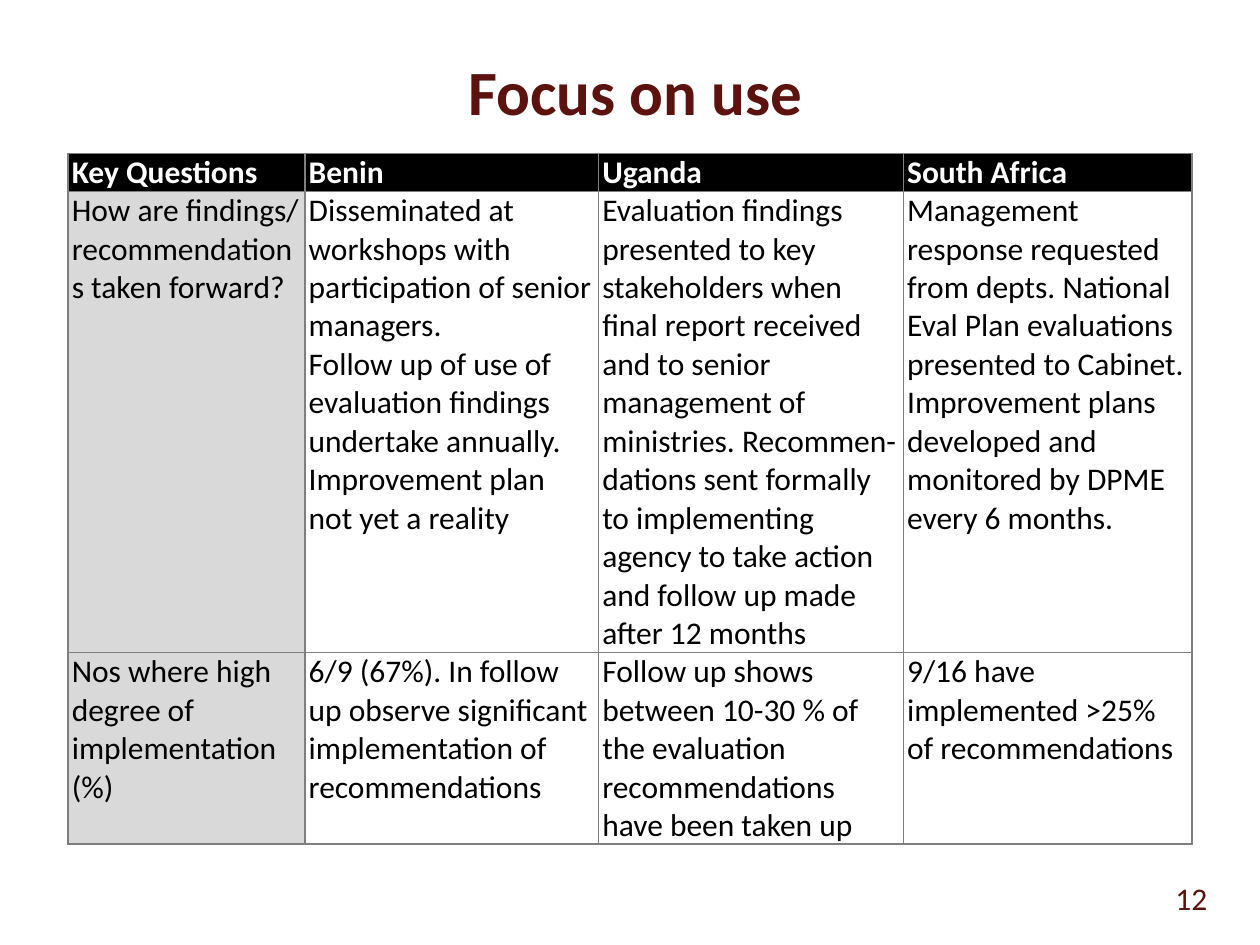
from lxml import etree
from pptx import Presentation
from pptx.dml.color import RGBColor
from pptx.enum.text import MSO_ANCHOR, PP_ALIGN
from pptx.oxml.ns import qn
from pptx.util import Inches, Pt

MIDDLE = MSO_ANCHOR.MIDDLE
CENTER, LEFT, JUSTIFY = PP_ALIGN.CENTER, PP_ALIGN.LEFT, PP_ALIGN.JUSTIFY

MAROON = RGBColor(0x5C, 0x12, 0x0E)
BLACK = RGBColor(0, 0, 0)
WHITE = RGBColor(0xFF, 0xFF, 0xFF)
PALE = RGBColor(0xD9, 0xD9, 0xD9)
GREY = RGBColor(0x7F, 0x7F, 0x7F)

COLS = [1.88, 2.33, 2.42, 2.29]
ROWS = [0.3, 3.66, 1.52]
CELLS = [
    ["Key Questions", "Benin", "Uganda", "South Africa"],
    [
        "How are findings/ recommendations taken forward?",
        "Disseminated at workshops with participation of senior managers.\n"
        "Follow up of use of evaluation findings undertake annually.\n"
        "Improvement plan not yet a reality",
        "Evaluation findings presented to key stakeholders when final report "
        "received and to senior management of ministries. Recommen-dations "
        "sent formally to implementing agency to take action and follow up "
        "made after 12 months",
        "Management response requested from depts. National Eval Plan "
        "evaluations presented to Cabinet.\n"
        "Improvement plans developed and monitored by DPME every 6 months.",
    ],
    [
        "Nos where high degree of implementation (%)",
        "6/9 (67%). In follow up observe significant implementation of "
        "recommendations",
        "Follow up shows between 10-30 % of the evaluation recommendations "
        "have been taken up",
        "9/16 have implemented >25% of recommendations",
    ],
]


class Deck:
    """Style and current slide."""

    font = "Calibri"
    size = 18

    def __init__(self, slide):
        self.slide = slide

    def text(self, frame, words, color, align, size=None, bold=False):
        frame.text = words
        for para in frame.paragraphs:
            para.alignment = align
            for run in para.runs:
                run.font.name = self.font
                run.font.size = Pt(size or self.size)
                run.font.bold = bold
                run.font.color.rgb = color

    def title(self, words, left, top, width, height):
        shape = self.slide.shapes.title
        shape.left, shape.top = Inches(left), Inches(top)
        shape.width, shape.height = Inches(width), Inches(height)
        shape.text_frame.vertical_anchor = MIDDLE
        self.text(shape.text_frame, words, MAROON, CENTER, 36, True)

    def label(self, words, left, top, width, height):
        box = self.slide.shapes.add_textbox(
            Inches(left), Inches(top), Inches(width), Inches(height))
        box.text_frame.word_wrap = True
        box.text_frame.vertical_anchor = MIDDLE
        self.text(box.text_frame, words, MAROON, CENTER)

    def border(self, cell):
        props = cell._tc.get_or_add_tcPr()
        for n, side in enumerate(("a:lnL", "a:lnR", "a:lnT", "a:lnB")):
            line = etree.Element(qn(side), w=str(Pt(1)))
            fill = etree.SubElement(line, qn("a:solidFill"))
            etree.SubElement(fill, qn("a:srgbClr"), val=str(GREY))
            props.insert(n, line)

    def cell(self, cell, words, head, side):
        cell.margin_left = cell.margin_right = Inches(0.03)
        cell.margin_top = cell.margin_bottom = 0
        if head or side:
            cell.fill.solid()
            cell.fill.fore_color.rgb = BLACK if head else PALE
        else:
            cell.fill.background()
        self.border(cell)
        self.text(cell.text_frame, words, WHITE if head else BLACK,
                  JUSTIFY if head else LEFT, bold=head)

    def table(self, cells, left, top, cols, rows):
        grid = self.slide.shapes.add_table(
            len(rows), len(cols), Inches(left), Inches(top),
            Inches(sum(cols)), Inches(sum(rows))).table
        for col, width in zip(grid.columns, cols):
            col.width = Inches(width)
        for row, height in zip(grid.rows, rows):
            row.height = Inches(height)
        for r, line in enumerate(cells):
            for c, words in enumerate(line):
                self.cell(grid.cell(r, c), words, r == 0, c == 0)


def main():
    prs = Presentation()
    prs.slide_width, prs.slide_height = Inches(10), Inches(7.5)
    deck = Deck(prs.slides.add_slide(prs.slide_layouts[5]))
    deck.title("Focus on use", 0.28, 0.2, 9.53, 1.03)
    deck.label("12", 9.08, 6.91, 0.75, 0.44)
    deck.table(CELLS, 0.54, 1.22, COLS, ROWS)
    prs.save("out.pptx")


if __name__ == "__main__":
    main()
